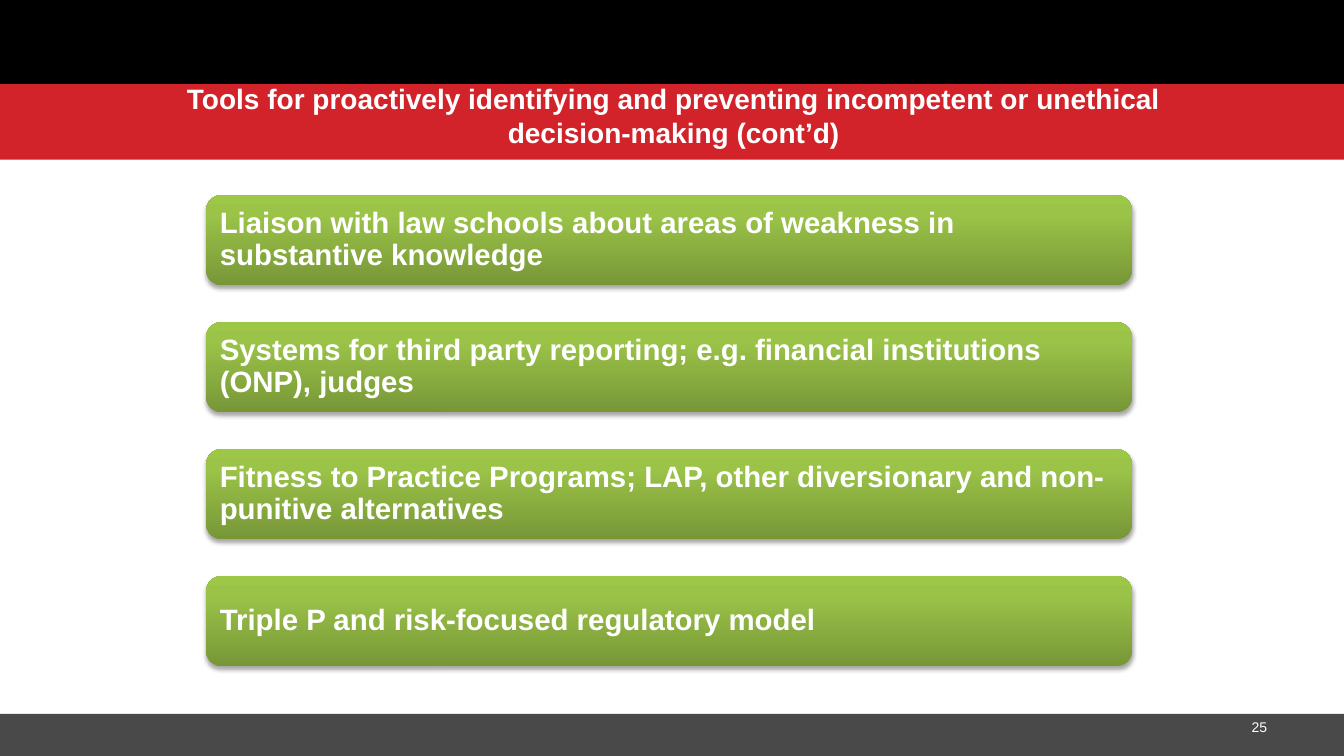
from dataclasses import dataclass
from typing import Any

from lxml import etree
from pptx import Presentation
from pptx import util as u
from pptx.dml import color
from pptx.enum import shapes, text
from pptx.oxml import ns


@dataclass(frozen=True)
class Theme:
    font: str = "Arial"
    white: str = "FFFFFF"
    black: str = "000000"
    red: str = "D2232A"
    gray: str = "494949"
    greens: tuple[tuple[int, str], ...] = ((0, "779737"), (80, "9BC348"), (100, "9DC746"))
    title_size: float = 20
    card_size: float = 21
    number_size: float = 10


@dataclass(frozen=True)
class Box:
    left: float
    top: float
    width: float
    height: float

    def lengths(self) -> list[int]:
        return [u.Pt(v) for v in (self.left, self.top, self.width, self.height)]


@dataclass(frozen=True)
class Bar:
    box: Box
    fill: str


@dataclass(frozen=True)
class Label:
    text: str
    size: float
    bold: bool
    align: text.PP_ALIGN
    anchor: text.MSO_ANCHOR
    inset_x: float = 7.2
    inset_y: float = 3.6
    line_spacing: float = 1.0


THEME = Theme()
SLIDE = Box(0, 0, 960, 540)

BARS = [
    Bar(Box(0, 0, SLIDE.width, 66), THEME.black),
    Bar(Box(0, 60, SLIDE.width, 54), THEME.red),
    Bar(Box(0, 510, SLIDE.width, 30), THEME.gray),
]

TITLE_BOX = Box(122.4, 54.7, 717.8, 55.4)
TITLE = Label(
    "Tools for proactively identifying and preventing incompetent or unethical "
    "decision-making (cont’d)",
    THEME.title_size, True, text.PP_ALIGN.CENTER, text.MSO_ANCHOR.TOP,
)

NUMBER_BOX = Box(688.3, 509.8, 223.9, 19.4)
NUMBER = Label("25", THEME.number_size, False, text.PP_ALIGN.RIGHT, text.MSO_ANCHOR.MIDDLE)

FIRST_CARD = Box(147.3, 139.5, 661.2, 64.3)
CARD_STEP = 90.7
TOOLS = [
    "Liaison with law schools about areas of weakness in substantive knowledge",
    "Systems for third party reporting; e.g. financial institutions (ONP), judges",
    "Fitness to Practice Programs; LAP, other diversionary and non-punitive alternatives",
    "Triple P and risk-focused regulatory model",
]


def apply(obj: Any, values: dict[str, Any]) -> None:
    for name, value in values.items():
        setattr(obj, name, value)


def add_node(parent: Any, tag: str, **attrs: Any) -> Any:
    return etree.SubElement(parent, ns.qn(tag), {k: str(v) for k, v in attrs.items()})


def add_color(parent: Any, value: str) -> Any:
    return add_node(parent, "a:srgbClr", val=value)


def write(sp: Any, label: Label) -> None:
    tf = sp.text_frame
    apply(tf, {
        "word_wrap": True,
        "vertical_anchor": label.anchor,
        "margin_left": u.Pt(label.inset_x),
        "margin_right": u.Pt(label.inset_x),
        "margin_top": u.Pt(label.inset_y),
        "margin_bottom": u.Pt(label.inset_y),
    })
    p = tf.paragraphs[0]
    apply(p, {"alignment": label.align, "line_spacing": label.line_spacing})
    r = p.add_run()
    r.text = label.text
    apply(r.font, {"name": THEME.font, "size": u.Pt(label.size), "bold": label.bold})
    r.font.color.rgb = color.RGBColor.from_string(THEME.white)


def add_shape(s: Any, kind: shapes.MSO_SHAPE, box: Box) -> Any:
    sp = s.shapes.add_shape(kind, *box.lengths())
    sp.shadow.inherit = False
    sp.line.fill.background()
    return sp


def add_bar(s: Any, bar: Bar) -> None:
    sp = add_shape(s, shapes.MSO_SHAPE.RECTANGLE, bar.box)
    sp.fill.solid()
    sp.fill.fore_color.rgb = color.RGBColor.from_string(bar.fill)


def add_text(s: Any, box: Box, label: Label) -> None:
    write(s.shapes.add_textbox(*box.lengths()), label)


def add_card(s: Any, box: Box, tool: str) -> None:
    sp = add_shape(s, shapes.MSO_SHAPE.ROUNDED_RECTANGLE, box)
    sp.fill.gradient()
    sp.fill.gradient_angle = 90
    stops = sp._element.spPr.find(".//" + ns.qn("a:gsLst"))
    stops.clear()
    for position, value in THEME.greens:
        add_color(add_node(stops, "a:gs", pos=position * 1000), value)
    effects = sp._element.spPr.find(ns.qn("a:effectLst"))
    shadow = add_node(
        effects, "a:outerShdw", blurRad=u.Pt(3.1), dist=u.Pt(1.8),
        dir=90 * 60000, rotWithShape=0,
    )
    add_node(add_color(shadow, THEME.black), "a:alpha", val=35000)
    write(sp, Label(tool, THEME.card_size, True, text.PP_ALIGN.LEFT,
                    text.MSO_ANCHOR.MIDDLE, 6.6, 6.6, 0.9))


def main() -> None:
    prs = Presentation()
    apply(prs, {"slide_width": u.Pt(SLIDE.width), "slide_height": u.Pt(SLIDE.height)})
    s = prs.slides.add_slide(prs.slide_layouts[6])
    for bar in BARS:
        add_bar(s, bar)
    add_text(s, TITLE_BOX, TITLE)
    for i, tool in enumerate(TOOLS):
        top = FIRST_CARD.top + i * CARD_STEP
        add_card(s, Box(FIRST_CARD.left, top, FIRST_CARD.width, FIRST_CARD.height), tool)
    add_text(s, NUMBER_BOX, NUMBER)
    prs.save("out.pptx")


if __name__ == "__main__":
    main()
